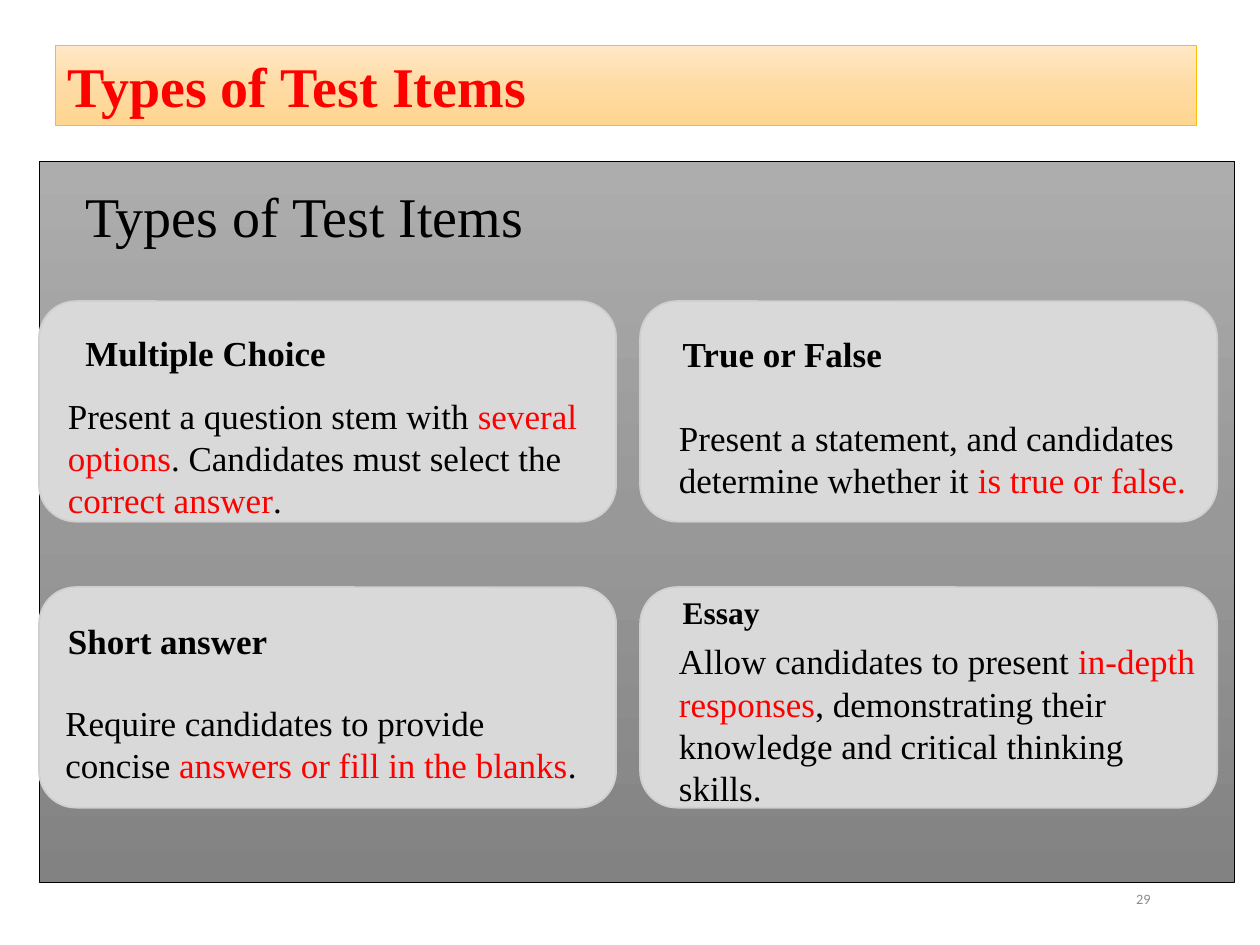
import copy

from pptx import Presentation
from pptx.dml.color import RGBColor
from pptx.enum import shapes, text
from pptx.oxml.ns import qn
from pptx.util import Inches, Pt

BLACK = RGBColor(0x00, 0x00, 0x00)
RED = RGBColor(0xFF, 0x00, 0x00)
GRAY = RGBColor(0x8C, 0x8C, 0x8C)
CARD_FILL = RGBColor(0xD9, 0xD9, 0xD9)
CARD_LINE = RGBColor(0xD0, 0xCE, 0xCE)
GOLD = RGBColor(0xFF, 0xC0, 0x00)
PANEL_GRADIENT = [RGBColor(0xAD, 0xAD, 0xAD), RGBColor(0x98, 0x98, 0x98), RGBColor(0x82, 0x82, 0x82)]
BANNER_GRADIENT = [RGBColor(0xFF, 0xE8, 0xC7), RGBColor(0xFF, 0xDB, 0xA4), RGBColor(0xFF, 0xD5, 0x8F)]

prs = Presentation()
prs.slide_width, prs.slide_height = Inches(10), Inches(7.5)
s = prs.slides.add_slide(prs.slide_layouts[6])


def add_box(preset, box, fill, line, width):
    """Add a shape; a list of three colours as fill makes a top-to-bottom gradient."""
    sp = s.shapes.add_shape(preset, *map(Inches, box))
    sp.shadow.inherit = False
    sp.line.color.rgb = line
    sp.line.width = Pt(width)
    if isinstance(fill, list):
        sp.fill.gradient()
        sp.fill.gradient_angle = 270
        first = sp._element.spPr.find(".//" + qn("a:gs"))
        middle = copy.deepcopy(first)
        middle.set("pos", "50000")
        first.addnext(middle)
        for stop, color in zip(sp.fill.gradient_stops, fill):
            stop.color.rgb = color
    else:
        sp.fill.solid()
        sp.fill.fore_color.rgb = fill
    return sp


def add_text(words, box=None, sp=None, size=20, color=BLACK, bold=False,
             font="Times New Roman", align=text.PP_ALIGN.LEFT, anchor=text.MSO_ANCHOR.TOP):
    """Write words in sp or a new text box; parts between asterisks turn red."""
    sp = sp or s.shapes.add_textbox(*map(Inches, box))
    tf = sp.text_frame
    tf.word_wrap = True
    tf.vertical_anchor = anchor
    p = tf.paragraphs[0]
    p.alignment = align
    for i, part in enumerate(words.split("*")):
        if part:
            r = p.add_run()
            r.text = part
            r.font.name, r.font.size, r.font.bold = font, Pt(size), bold
            r.font.color.rgb = RED if i % 2 else color


add_text("29", (6.98, 6.93, 2.25, 0.4), size=8.2, color=GRAY, font="Calibri",
         align=text.PP_ALIGN.RIGHT, anchor=text.MSO_ANCHOR.MIDDLE)

add_box(shapes.MSO_SHAPE.RECTANGLE, (0.31, 1.28, 9.49, 5.72), PANEL_GRADIENT, BLACK, 0.5)
add_text("Types of Test Items", (0.58, 1.39, 5.08, 0.64), size=32)

# heading, heading box, heading size, description, description box
cards = [
    ("Multiple Choice", (0.58, 2.58, 2.5, 0.44), 20,
     "Present a question stem with *several options*. Candidates must select the *correct answer*.",
     (0.44, 3.08, 4.33, 1.11)),
    ("True or False", (5.32, 2.59, 2, 0.44), 20,
     "Present a statement, and candidates determine whether it *is true or false.*",
     (5.29, 3.26, 4.33, 0.77)),
    ("Short answer", (0.44, 4.87, 2.14, 0.44), 20,
     "Require candidates to provide concise *answers or fill in the blanks*.",
     (0.42, 5.52, 4.33, 0.77)),
    ("Essay", (5.32, 4.66, 2.13, 0.4), 18,
     "Allow candidates to present *in-depth responses*, demonstrating their knowledge "
     "and critical thinking skills.",
     (5.29, 5.03, 4.3, 1.45)),
]
for i, (heading, heading_box, size, description, description_box) in enumerate(cards):
    row, col = divmod(i, 2)
    add_box(shapes.MSO_SHAPE.ROUNDED_RECTANGLE,
            (0.31 + col * 4.77, 2.39 + row * 2.27, 4.58, 1.75), CARD_FILL, CARD_LINE, 1)
    add_text(heading, heading_box, size=size, bold=True)
    add_text(description, description_box)

banner = add_box(shapes.MSO_SHAPE.RECTANGLE, (0.44, 0.36, 9.06, 0.64), BANNER_GRADIENT, GOLD, 0.5)
add_text("Types of Test Items", sp=banner, size=32, color=RED, bold=True)

prs.save("out.pptx")
